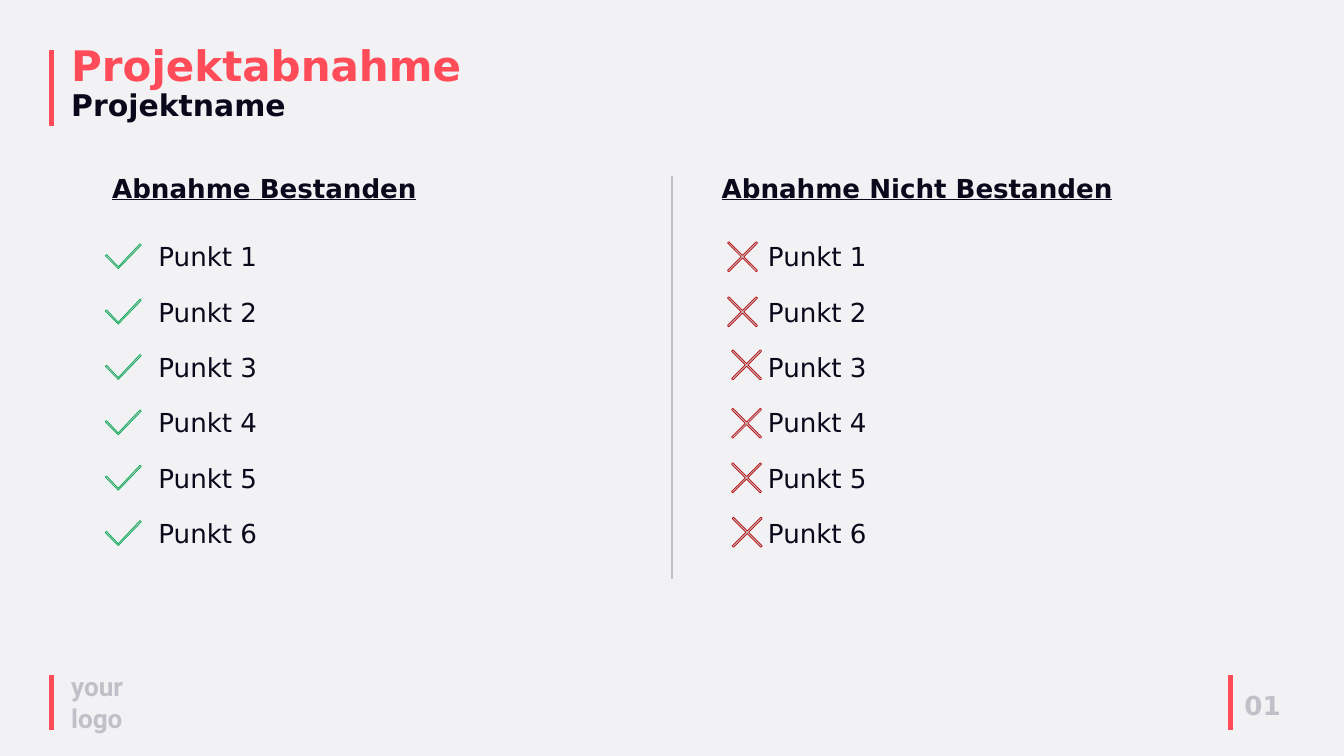
from lxml import etree
from pptx import Presentation
from pptx.dml.color import RGBColor
from pptx.enum import text
from pptx.oxml.ns import qn
from pptx.util import Inches, Pt

RED, NAVY, GREY = "FF4C58", "0A091B", "C0C0C8"
GREEN, DARK_RED, PALE = "00B050", "C00000", "F2F2F5"
FONT = "DejaVu Sans"

# Outlines in hundredths of an inch
CHECK = [(53, 1), (52, 0), (51, 0), (19, 34), (2, 16), (1, 16), (0, 17),
         (0, 18), (18, 36), (19, 37), (20, 36), (53, 2)]
CROSS = [(24, 22), (44, 2), (44, 1), (43, 0), (42, 0), (22, 20), (2, 0),
         (1, 0), (0, 1), (0, 2), (20, 22), (0, 42), (0, 43), (1, 44),
         (2, 44), (22, 24), (42, 44), (43, 44), (44, 43), (44, 42)]
CROSS_PLACES = [(10.83, 3.6), (10.83, 4.42), (10.89, 5.21),
                (10.89, 6.08), (10.89, 6.89), (10.9, 7.7)]
FIRST_POINT_TOP, POINT_PITCH = 3.53, 0.824


def rgb(value):
    return RGBColor.from_string(value)


def style_font(font, size, color, bold=False, underline=None, name=FONT):
    font.name, font.size, font.bold = name, Pt(size), bold
    font.underline = underline
    font.color.rgb = rgb(color)


def add_label(slide, wording, left, top, width, height=0.57,
              color=NAVY, **font_style):
    label = slide.shapes.add_textbox(
        Inches(left), Inches(top), Inches(width), Inches(height))
    frame = label.text_frame
    frame.word_wrap = True
    frame.auto_size = text.MSO_AUTO_SIZE.SHAPE_TO_FIT_TEXT
    frame.text = wording
    style_font(frame.paragraphs[0].font, 28, color, **font_style)


def add_vertical_rule(slide, x, top, bottom, color=RED, width=5):
    rule = slide.shapes.add_connector(
        1, Inches(x), Inches(top), Inches(x), Inches(bottom))
    rule.line.color.rgb = rgb(color)
    rule.line.width = Pt(width)
    etree.SubElement(rule._element.spPr, qn("a:effectLst"))


def add_mark(slide, outline, left, top, color):
    builder = slide.shapes.build_freeform(*outline[0], scale=Inches(0.01))
    builder.add_line_segments(outline[1:], close=True)
    mark = builder.convert_to_shape(Inches(left), Inches(top))
    mark.shadow.inherit = False
    mark.fill.solid()
    mark.fill.fore_color.rgb = rgb(GREY)
    mark.line.color.rgb = rgb(color)
    mark.line.width = Pt(0.75)


def add_title(slide):
    title = slide.shapes.title
    title.left, title.top = Inches(0.96), Inches(0.62)
    title.width, title.height = Inches(6.21), Inches(1.27)
    frame = title.text_frame
    frame.word_wrap = True
    frame.auto_size = text.MSO_AUTO_SIZE.SHAPE_TO_FIT_TEXT
    frame.vertical_anchor = text.MSO_ANCHOR.TOP
    paragraph = frame.paragraphs[0]
    paragraph.alignment = text.PP_ALIGN.LEFT
    paragraph.line_spacing = 0.9
    heading = paragraph.add_run()
    heading.text = "Projektabnahme"
    style_font(heading.font, 45, RED, bold=True)
    paragraph.add_line_break()
    project = paragraph.add_run()
    project.text = "Projektname"
    style_font(project.font, 32, NAVY, bold=True)


def add_column(slide, heading, left, heading_width):
    add_label(slide, heading, left, 2.52, heading_width,
              bold=True, underline=True)
    for index in range(6):
        add_label(slide, f"Punkt {index + 1}", left + 0.69,
                  FIRST_POINT_TOP + index * POINT_PITCH, 6.42)


def main():
    prs = Presentation()
    prs.slide_width, prs.slide_height = Inches(20), Inches(11.25)
    slide = prs.slides.add_slide(prs.slide_layouts[5])
    slide.background.fill.solid()
    slide.background.fill.fore_color.rgb = rgb(PALE)

    add_vertical_rule(slide, 0.77, 0.75, 1.88)
    add_title(slide)
    for x in (0.77, 18.31):
        add_vertical_rule(slide, x, 10.05, 10.86)
    add_label(slide, "your logo", 0.96, 9.93, 1.19, 1.04, GREY,
              bold=True, name="Roboto")
    add_label(slide, "01", 18.42, 10.21, 1.9, color=GREY, bold=True)

    add_vertical_rule(slide, 10, 2.62, 8.62, GREY, 2)
    add_column(slide, "Abnahme Bestanden", 1.57, 4.85)
    add_column(slide, "Abnahme Nicht Bestanden", 10.64, 6.19)
    for index, (cross_left, cross_top) in enumerate(CROSS_PLACES):
        check_top = FIRST_POINT_TOP + 0.1 + index * POINT_PITCH
        add_mark(slide, CHECK, 1.57, check_top, GREEN)
        add_mark(slide, CROSS, cross_left, cross_top, DARK_RED)

    prs.save("out.pptx")


if __name__ == "__main__":
    main()
